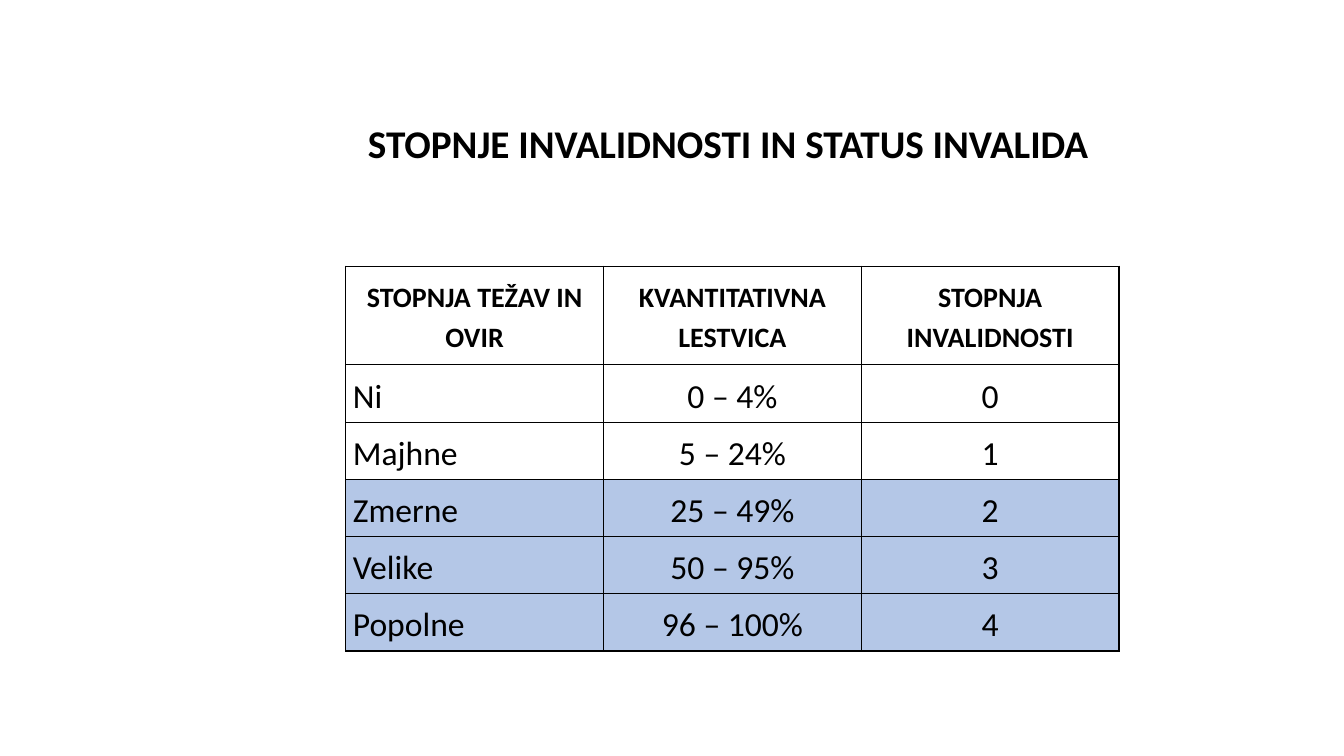
from pptx import Presentation
from pptx.util import Inches, Pt
from pptx.dml.color import RGBColor
from pptx.enum.text import PP_ALIGN as Align, MSO_ANCHOR as Anchor
from pptx.oxml import parse_xml
from pptx.oxml.ns import nsdecls

BLACK, BLUE = "000000", "B4C7E7"
ROWS = [
    ("STOPNJA TEŽAV IN OVIR", "KVANTITATIVNA LESTVICA", "STOPNJA INVALIDNOSTI"),
    ("Ni", "0 – 4%", "0"),
    ("Majhne", "5 – 24%", "1"),
    ("Zmerne", "25 – 49%", "2"),
    ("Velike", "50 – 95%", "3"),
    ("Popolne", "96 – 100%", "4"),
]
HEAD = 0.98  # height of the header row
SHADED = 3  # first row with a blue fill


def color(code):
    return RGBColor.from_string(code)


def write(frame, text, size=24, bold=False, align=Align.CENTER, lead=1.15):
    para = frame.paragraphs[0]
    para.alignment = align
    para.line_spacing = lead
    para.space_before = Pt(0)
    run = para.add_run()
    run.text = text
    font = run.font
    font.name, font.size, font.bold = "Calibri", Pt(size), bold
    font.color.rgb = color(BLACK)


def border(cell):
    props = cell._tc.get_or_add_tcPr()
    for side in "LRTB":
        props.append(parse_xml(
            f'<a:ln{side} w="{Pt(1)}" {nsdecls("a")}><a:solidFill>'
            f'<a:srgbClr val="{BLACK}"/></a:solidFill></a:ln{side}>'))


def add_title(slide, left, top, width, height):
    title = slide.shapes.title
    title.left, title.top = Inches(left), Inches(top)
    title.width, title.height = Inches(width), Inches(height)
    frame = title.text_frame
    frame.margin_left = frame.margin_right = 0
    frame.margin_top = frame.margin_bottom = 0
    frame.vertical_anchor = Anchor.TOP
    frame.word_wrap = True
    write(frame, "STOPNJE INVALIDNOSTI IN STATUS INVALIDA ",
          size=28, bold=True, lead=0.9)


def add_scale(slide, left, top, width, height):
    table = slide.shapes.add_table(
        len(ROWS), len(ROWS[0]), Inches(left), Inches(top),
        Inches(width), Inches(height)).table
    table.first_row = table.horz_banding = False

    # Taller header, equal rows below
    step = (height - HEAD) / (len(ROWS) - 1)
    for r, row in enumerate(table.rows):
        row.height = Inches(step if r else HEAD)

    # Cell text, borders and fills
    for r, texts in enumerate(ROWS):
        for c, text in enumerate(texts):
            cell = table.cell(r, c)
            cell.margin_left = cell.margin_right = Inches(0.07)
            cell.margin_top = cell.margin_bottom = 0
            cell.vertical_anchor = Anchor.MIDDLE
            border(cell)
            if r >= SHADED:
                cell.fill.solid()
                cell.fill.fore_color.rgb = color(BLUE)
            else:
                cell.fill.background()
            label = r > 0 and c == 0
            write(cell.text_frame, text, size=24 if r else 20, bold=r == 0,
                  align=Align.LEFT if label else Align.CENTER)


def main():
    deck = Presentation()
    deck.slide_width, deck.slide_height = Inches(13.33), Inches(7.5)
    slide = deck.slides.add_slide(deck.slide_layouts[5])
    add_title(slide, 2.96, 1.24, 8.61, 0.9)
    add_scale(slide, 3.43, 2.64, 7.67, 3.82)
    deck.save("out.pptx")


if __name__ == "__main__":
    main()
